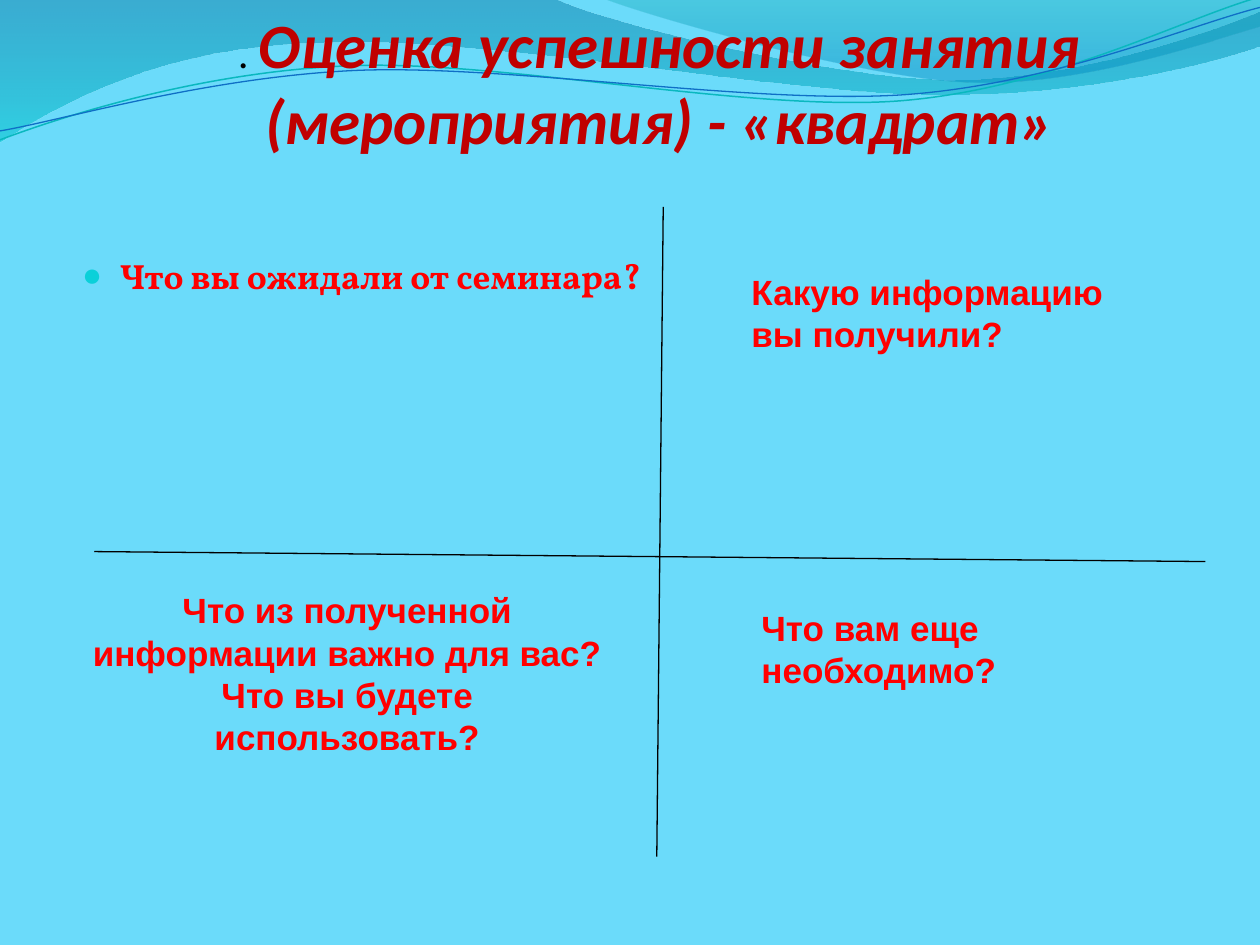
from lxml.etree import SubElement
from pptx import Presentation
from pptx.dml.color import RGBColor
from pptx.enum.shapes import MSO_CONNECTOR
from pptx.enum.text import MSO_ANCHOR, MSO_AUTO_SIZE, PP_ALIGN
from pptx.oxml.ns import qn
from pptx.util import Cm, Pt

COLORS = {
    "sky": "6BDBFA", "title": "C00000", "question": "FF0000", "black": "000000",
    "bullet": "0BD0D9", "deep": "0074A1", "aqua": "00C6CF", "teal": "00A1A9",
    "ocean": "008BBF", "thread": "0AB8BF", "blue": "0F6FC6",
}

WIDE_WAVE = [
    (0, -0.03), (11.18, -0.03),
    (12.09, 0.43, 16.87, 1.6, 19.25, 1.6), (21.67, 1.6, 24.33, 0.66, 25.4, 0.23),
    (25.43, 0.91), (24.97, 1.12, 22.1, 1.93, 18.95, 1.91),
    (15.8, 1.91, 9.7, 0.71, 6.53, 0.86), (3.28, 0.89, 1.17, 2.11, -0.03, 2.87),
]
RIGHT_WAVE = [
    (12.17, -0.03), (12.93, 0.28, 17.32, 1.57, 19.53, 1.65),
    (21.74, 1.75, 24.41, 0.81, 25.4, 0.53), (25.4, 0),
]
TEAL_THREAD = [
    (-0.05, 2.22), (1.19, 1.82, 4.02, 1.04, 7.05, 1.06),
    (10.05, 1.07, 15.02, 2.37, 18.08, 2.29), (21.13, 2.2, 23.87, 0.91, 25.41, 0.55),
]
BLUE_THREAD = [
    (-0.04, 2.04), (1.16, 1.9, 4.18, 1.15, 7.2, 1.16),
    (10.25, 1.18, 15.13, 2.23, 18.19, 2.17), (21.21, 2.1, 23.93, 1.06, 25.45, 0.75),
]


def color(name):
    return RGBColor.from_string(COLORS[name])


def write(para, text, font="Arial", size=20, tint="question", bold=True, italic=False):
    span = para.add_run()
    span.text = text
    span.font.name = font
    span.font.size = Pt(size)
    span.font.color.rgb = color(tint)
    span.font.bold = bold
    span.font.italic = italic


def bend(shape, segments):
    corners = iter(list(shape._element.iter(qn("a:lnTo"))))
    for segment in segments[1:]:
        corner = next(corners)
        if len(segment) == 6:
            corner.tag = qn("a:cubicBezTo")
            for extra in (next(corners), next(corners)):
                corner.append(extra[0])
                extra.getparent().remove(extra)


class SlideBuilder:
    def __init__(self, deck):
        self.page = deck.slides.add_slide(deck.slide_layouts[1])
        fill = self.page.background.fill
        fill.solid()
        fill.fore_color.rgb = color("sky")

    def curve(self, segments, closed):
        points = [(Cm(x), Cm(y)) for segment in segments
                  for x, y in zip(segment[::2], segment[1::2])]
        builder = self.page.shapes.build_freeform(*points[0])
        builder.add_line_segments(points[1:], close=closed)
        shape = builder.convert_to_shape()
        bend(shape, segments)
        shape.shadow.inherit = False
        self.page.shapes.title._element.addprevious(shape._element)
        return shape

    def wave(self, segments, stops):
        shape = self.curve(segments, True)
        shape.line.fill.background()
        shape.fill.gradient()
        shape.fill.gradient_angle = 270
        for stop, (position, tint, opacity) in zip(shape.fill.gradient_stops, stops):
            stop.position = position
            stop.color.rgb = color(tint)
            alpha = SubElement(stop._gs.find(qn("a:srgbClr")), qn("a:alpha"))
            alpha.set("val", str(opacity * 1000))

    def thread(self, segments, tint, width):
        shape = self.curve(segments, False)
        shape.rotation = 357.3
        shape.fill.background()
        shape.line.color.rgb = color(tint)
        shape.line.width = Pt(width)

    def place(self, box, left, top, width, height, anchor):
        box.left, box.top, box.width, box.height = map(Cm, (left, top, width, height))
        frame = box.text_frame
        frame.word_wrap = True
        frame.auto_size = MSO_AUTO_SIZE.NONE
        frame.vertical_anchor = anchor
        return frame

    def title(self, text, *bounds):
        frame = self.place(self.page.shapes.title, *bounds, MSO_ANCHOR.BOTTOM)
        frame.margin_left = frame.margin_right = frame.margin_bottom = 0
        para = frame.paragraphs[0]
        para.alignment = PP_ALIGN.CENTER
        write(para, ". ", font="Calibri", size=24, tint="black", bold=False, italic=True)
        write(para, text, font="Calibri", size=36, tint="title", italic=True)

    def bullet(self, text, *bounds):
        frame = self.place(self.page.placeholders[1], *bounds, MSO_ANCHOR.TOP)
        frame.margin_top = Cm(0.95)
        para = frame.paragraphs[0]
        para.space_before = Pt(0)
        write(para, text, font="Vollkorn")
        properties = para._p.get_or_add_pPr()
        properties.set("marL", str(Cm(0.76)))
        properties.set("indent", str(Cm(-0.76)))
        tint = SubElement(properties, qn("a:buClr"))
        SubElement(tint, qn("a:srgbClr")).set("val", COLORS["bullet"])
        SubElement(properties, qn("a:buSzPct")).set("val", "95000")
        SubElement(properties, qn("a:buChar")).set("char", "●")

    def question(self, lines, *bounds, align=PP_ALIGN.LEFT, bottom=0.13):
        box = self.page.shapes.add_textbox(0, 0, 0, 0)
        frame = self.place(box, *bounds, MSO_ANCHOR.MIDDLE)
        frame.margin_bottom = Cm(bottom)
        for number, line in enumerate(lines):
            para = frame.add_paragraph() if number else frame.paragraphs[0]
            para.alignment = align
            write(para, line)

    def axis(self, *ends):
        line = self.page.shapes.add_connector(MSO_CONNECTOR.STRAIGHT, *map(Cm, ends))
        line.line.color.rgb = color("black")
        line.line.width = Pt(0.75)
        SubElement(line._element.spPr, qn("a:effectLst"))


def main():
    deck = Presentation()
    deck.slide_width, deck.slide_height = Cm(25.4), Cm(19.05)
    slide = SlideBuilder(deck)
    slide.wave(WIDE_WAVE, [(0, "deep", 45), (1, "aqua", 55)])
    slide.wave(RIGHT_WAVE, [(0, "teal", 30), (0.8, "ocean", 45)])
    slide.thread(TEAL_THREAD, "thread", 0.85)
    slide.thread(BLUE_THREAD, "blue", 0.75)
    slide.title("Оценка успешности занятия (мероприятия) - «квадрат»", 1.2, 0, 24.2, 3.16)
    slide.bullet("Что вы ожидали от семинара?", 1.4, 4.17, 22.96, 13.28)
    slide.axis(13.37, 4.17, 13.24, 17.27)
    slide.axis(1.9, 11.12, 24.3, 11.32)
    slide.question(["Какую информацию вы получили?"], 14.9, 5.33, 8.8, 1.96)
    slide.question(
        ["Что из полученной информации важно для вас?", "Что вы будете использовать?"],
        1.5, 11.73, 11, 4.45, align=PP_ALIGN.CENTER, bottom=0.9)
    slide.question(["Что вам еще необходимо?"], 15.1, 12.1, 9.4, 1.96)
    deck.save("out.pptx")


if __name__ == "__main__":
    main()
